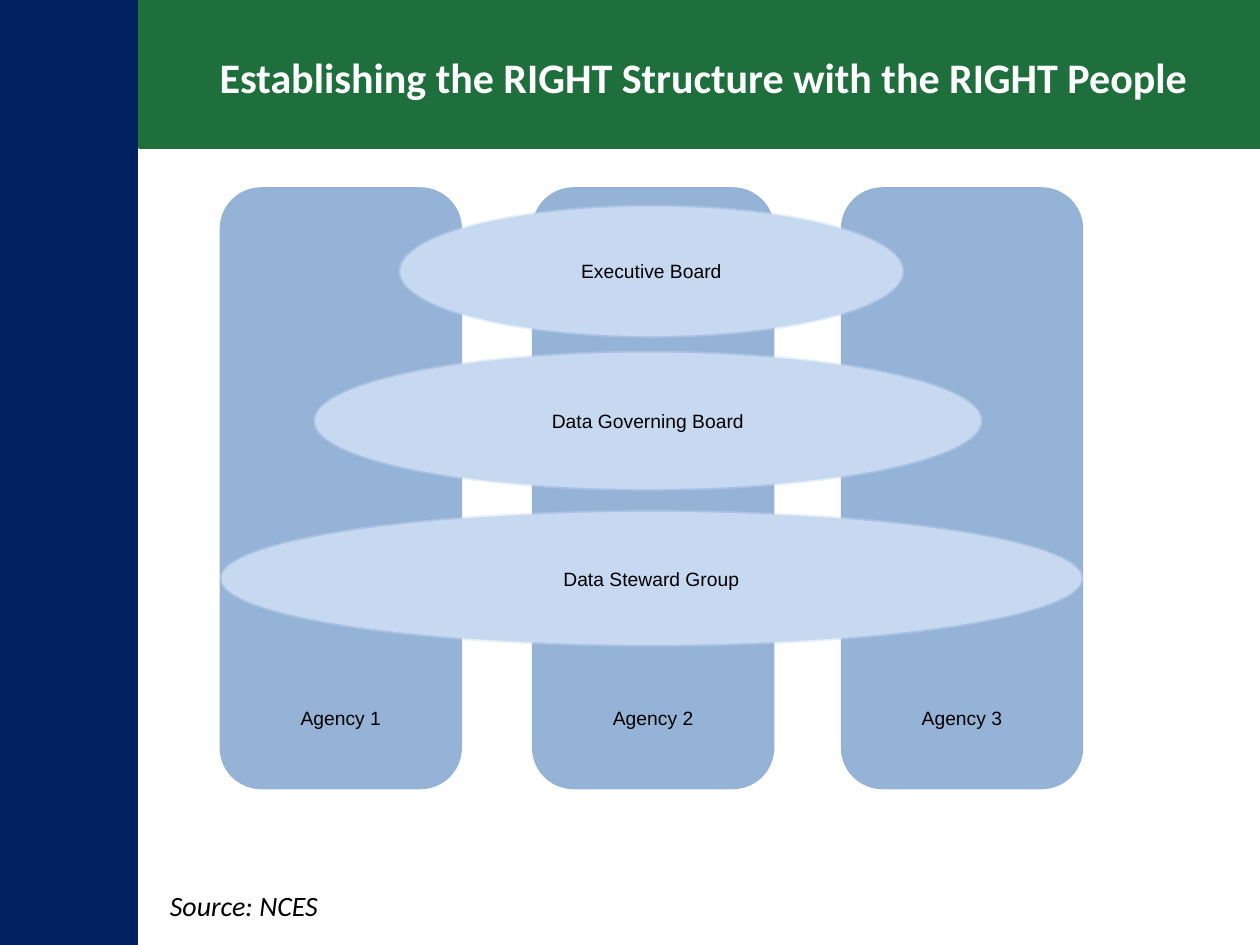
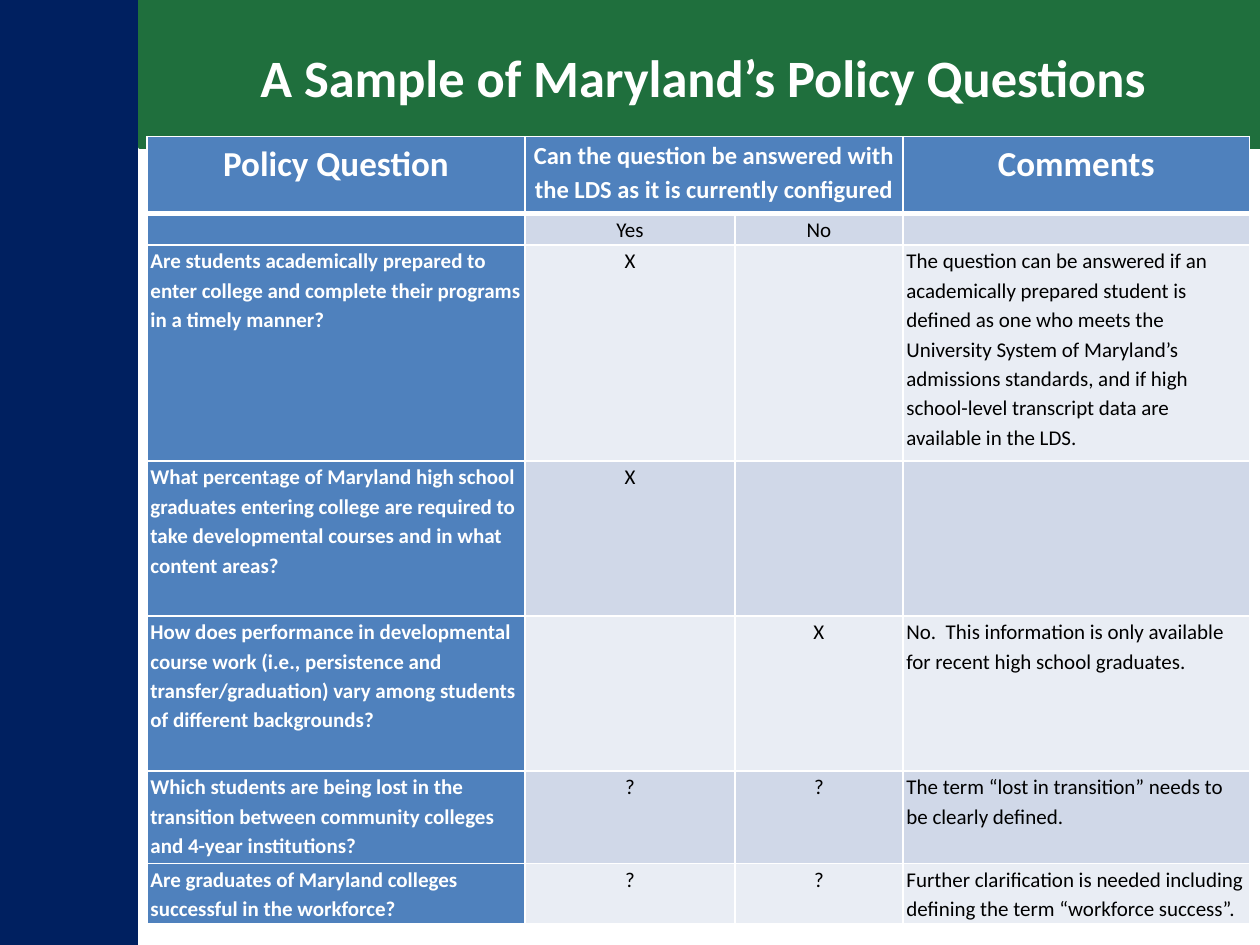
from lxml.etree import SubElement
from pptx import Presentation
from pptx.dml.color import RGBColor
from pptx.enum.shapes import MSO_SHAPE
from pptx.enum.text import MSO_ANCHOR, PP_ALIGN
from pptx.oxml.ns import qn
from pptx.util import Pt

COLORS = {
    "navy": "002060", "green": "1F6F3D", "white": "FFFFFF", "black": "000000",
    "agency": "95B3D7", "board": "C6D9F1",
    "header": "4F81BD", "band_dark": "D0D8E8", "band_light": "E9EDF4",
}
SIDE_BAND = (0, 0, 78, 540)
TOP_BAND = (80, 0, 640, 84)
TITLE_BOX = (78, 3.6, 648, 80)

# Governance diagram, relative to its box
AGENCY_LEFTS = {"Agency 1": 0, "Agency 2": 178.5, "Agency 3": 355}
AGENCY_WIDTH = 136.5
BOARDS = {  # name: (top, width, height, shift from centre)
    "Executive Board": (10, 287, 74, 0),
    "Data Governing Board": (93.5, 380.5, 78, -2),
    "Data Steward Group": (184.5, 491.5, 76, 0),
}

# Policy question table
COLUMN_WIDTHS = (216, 120, 96, 198)
ROW_HEIGHTS = (44, 18, 123.5, 88.5, 88.5, 53, 34.5)
HEADINGS = (
    ("Policy Question", 20),
    ("Can the question be answered with the LDS as it is currently configured", 14),
    ("", 14),
    ("Comments", 20),
)
POLICY_ROWS = (
    ("", "Yes", "No", ""),
    ("Are students academically prepared to enter college and complete their "
     "programs in a timely manner?", "X", "",
     "The question can be answered if an academically prepared student is defined "
     "as one who meets the University System of Maryland’s admissions standards, "
     "and if high school-level transcript data are available in the LDS."),
    ("What percentage of Maryland high school graduates entering college are "
     "required to take developmental courses and in what content areas?",
     "X", "", ""),
    ("How does performance in developmental course work (i.e., persistence and "
     "transfer/graduation) vary among students of different backgrounds?", "", "X",
     "No.  This information is only available for recent high school graduates."),
    ("Which students are being lost in the transition between community colleges "
     "and 4-year institutions?", "?", "?",
     "The term “lost in transition” needs to be clearly defined."),
    ("Are graduates of Maryland colleges successful in the workforce?", "?", "?",
     "Further clarification is needed including defining the term “workforce success”."),
)


def rgb(color):
    return RGBColor.from_string(COLORS[color])


def points(box):
    return [Pt(length) for length in box]


def add_run(paragraph, text, size, color="black", font="Calibri", bold=False, italic=False):
    run = paragraph.add_run()
    run.text = text
    run.font.size, run.font.name = Pt(size), font
    run.font.bold, run.font.italic = bold, italic
    run.font.color.rgb = rgb(color)


def add_block(shapes, kind, box, color, label=""):
    block = shapes.add_shape(kind, *points(box))
    block.shadow.inherit = False
    block.fill.solid()
    block.fill.fore_color.rgb = block.line.color.rgb = rgb(color)
    block.line.width = Pt(2)
    if label:
        block.text_frame.word_wrap = True
        paragraph = block.text_frame.paragraphs[0]
        paragraph.alignment = PP_ALIGN.CENTER
        add_run(paragraph, label, 11, font="Arial")
    return block


def add_framed_slide(deck, heading, size):
    """Slide with the side band, the top band and a title over them."""
    slide = deck.slides.add_slide(deck.slide_layouts[5])
    for box, color in ((SIDE_BAND, "navy"), (TOP_BAND, "green")):
        add_block(slide.shapes, MSO_SHAPE.RECTANGLE, box, color)
    title = slide.shapes.title
    title.left, title.top, title.width, title.height = points(TITLE_BOX)
    title.text_frame.vertical_anchor = MSO_ANCHOR.MIDDLE
    paragraph = title.text_frame.paragraphs[0]
    paragraph.alignment = PP_ALIGN.CENTER
    add_run(paragraph, heading, size, "white", bold=True)
    slide.shapes._spTree.append(title._element)  # bring in front of the bands
    return slide


def add_governance_diagram(slide, box):
    left, top, width, height = box
    diagram = slide.shapes.add_group_shape().shapes
    # Agency pillars
    for agency, offset in AGENCY_LEFTS.items():
        pillar = add_block(diagram, MSO_SHAPE.ROUNDED_RECTANGLE,
                           (left + offset, top, AGENCY_WIDTH, height), "agency", agency)
        pillar.text_frame.vertical_anchor = MSO_ANCHOR.BOTTOM
        pillar.text_frame.margin_bottom = Pt(26.5)
    # Boards that span the agencies
    for board, (offset, span, depth, shift) in BOARDS.items():
        ellipse = add_block(diagram, MSO_SHAPE.OVAL,
                            (left + (width - span) / 2 + shift, top + offset, span, depth),
                            "board", board)
        ellipse.text_frame.vertical_anchor = MSO_ANCHOR.MIDDLE
        outline = ellipse.line._ln.find(".//" + qn("a:srgbClr"))
        SubElement(outline, qn("a:alpha"), val="41000")


def add_source_note(slide, box, note):
    frame = slide.shapes.add_textbox(*points(box)).text_frame
    frame.word_wrap = True
    add_run(frame.paragraphs[0], note, 16, italic=True)


def set_borders(cell, top, bottom):
    properties = cell._tc.get_or_add_tcPr()
    for side, width in (("L", 1), ("R", 1), ("T", top), ("B", bottom)):
        line = SubElement(properties, qn(f"a:ln{side}"), w=str(Pt(width)))
        fill = SubElement(line, qn("a:solidFill"))
        SubElement(fill, qn("a:srgbClr"), val=COLORS["white"])


def fill_cell(cell, text, size, background, color, bold, centred):
    cell.fill.solid()
    cell.fill.fore_color.rgb = rgb(background)
    cell.margin_left = cell.margin_right = Pt(2)
    cell.margin_top = cell.margin_bottom = 0
    paragraph = cell.text_frame.paragraphs[0]
    paragraph.line_spacing = 1.15
    paragraph.alignment = PP_ALIGN.CENTER if centred else PP_ALIGN.LEFT
    if text:
        add_run(paragraph, text, size, color, bold=bold)
    else:
        SubElement(paragraph._p, qn("a:endParaRPr"), sz=str(size * 100))


def add_policy_table(slide, box):
    table = slide.shapes.add_table(len(ROW_HEIGHTS), len(COLUMN_WIDTHS), *points(box)).table
    for column, width in zip(table.columns, COLUMN_WIDTHS):
        column.width = Pt(width)
    for row, height in zip(table.rows, ROW_HEIGHTS):
        row.height = Pt(height)
    # Heading row
    for c, (heading, size) in enumerate(HEADINGS):
        cell = table.cell(0, c)
        set_borders(cell, 1, 3)
        fill_cell(cell, heading, size, "header", "white", True, True)
    table.cell(0, 1).merge(table.cell(0, 2))
    # Questions, answers and comments
    for r, answers in enumerate(POLICY_ROWS, 1):
        band = "band_dark" if r % 2 else "band_light"
        for c, text in enumerate(answers):
            question = c == 0
            cell = table.cell(r, c)
            set_borders(cell, 3 if r == 1 else 1, 1)
            fill_cell(cell, text, 12, "header" if question else band,
                      "white" if question else "black", question, c in (1, 2))


def main():
    deck = Presentation()
    deck.slide_width, deck.slide_height = Pt(720), Pt(540)

    structure = add_framed_slide(
        deck, "Establishing the RIGHT Structure with the RIGHT People", 24)
    add_governance_diagram(structure, (126.5, 108, 491.5, 342))
    add_source_note(structure, (90, 504, 312, 26.5), "Source: NCES")

    questions = add_framed_slide(deck, "A Sample of Maryland’s Policy Questions", 30)
    add_policy_table(questions, (84, 78, 630, 450))

    deck.save("out.pptx")


if __name__ == "__main__":
    main()
